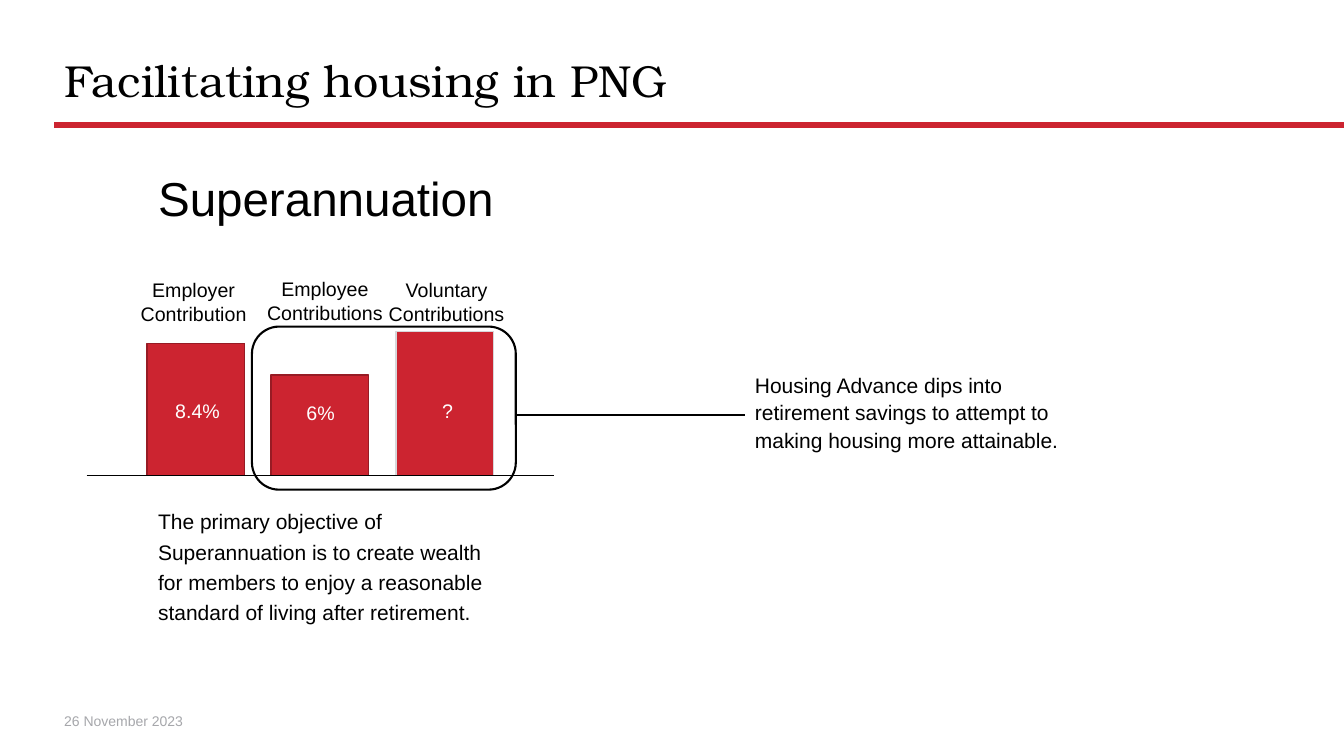
"""Build the superannuation and housing slide."""
from lxml import etree
from pptx import Presentation
from pptx.dml import color
from pptx.enum import shapes, text
from pptx.oxml import ns
from pptx.util import Cm, Pt

TITLE = "Facilitating housing in PNG"
HEADING = "Superannuation"
DATE = "26 November 2023"
OBJECTIVE = (
    "The primary objective of Superannuation is to create wealth for members "
    "to enjoy a reasonable standard of living after retirement."
)
ADVANCE = (
    "Housing Advance dips into retirement savings to attempt to making "
    "housing more attainable."
)
RED, DARK_RED, PALE, GREY = "CC2430", "971B24", "D7D7DA", "A6A7AB"
BLACK, WHITE = "000000", "FFFFFF"
SANS, SERIF = "Arial", "TeX Gyre Bonum"

BARS = [
    {"left": 3.71, "height": 3.33, "line": DARK_RED,
     "value": "8.4%", "value_box": (3.61, 9.93, 2.74, 0.86),
     "label": "Employer Contribution", "label_box": (3.28, 6.88, 3.2, 1.45)},
    {"left": 6.83, "height": 2.53, "line": DARK_RED,
     "value": "6%", "value_box": (6.71, 9.98, 2.74, 0.86),
     "label": "Employee Contributions", "label_box": (6.45, 6.86, 3.48, 1.45)},
    {"left": 9.98, "height": 3.63, "line": PALE,
     "value": "?", "value_box": (9.91, 9.93, 2.74, 0.86),
     "label": "Voluntary\nContributions", "label_box": (9.5, 6.88, 3.51, 1.45)},
]
BAR_WIDTH = 2.46
BASELINE = 11.98
FRAME = (6.35, 8.23, 6.65, 4.11)
LINK_Y = 10.46
LINES = [
    (1.37, 3.15, 33.87, RED, 5),
    (2.18, BASELINE, 13.97, BLACK, 0.5),
    (FRAME[0] + FRAME[2], LINK_Y, 18.77, BLACK, 1.5),
]


def rgb(value):
    """Turn a hex string into a colour."""
    return color.RGBColor.from_string(value)


def write(shape, content, box, size=14, font=SANS, ink=BLACK,
          align=text.PP_ALIGN.LEFT, anchor=text.MSO_ANCHOR.TOP, spacing=1.0):
    """Place a shape and fill it with formatted text."""
    shape.left, shape.top, shape.width, shape.height = map(Cm, box)
    frame = shape.text_frame
    frame.text = content
    frame.word_wrap = True
    frame.auto_size = text.MSO_AUTO_SIZE.NONE
    frame.vertical_anchor = anchor
    for paragraph in frame.paragraphs:
        properties = paragraph._p.get_or_add_pPr()
        properties.set("marL", "0")
        properties.set("indent", "0")
        etree.SubElement(properties, ns.qn("a:buNone"))
        paragraph.alignment = align
        paragraph.line_spacing = spacing
        paragraph.space_before = Pt(0)
        paragraph.font.size = Pt(size)
        paragraph.font.name = font
        paragraph.font.color.rgb = rgb(ink)


def add_text(slide, content, box, **style):
    """Add a text box with formatted text."""
    write(slide.shapes.add_textbox(0, 0, 0, 0), content, box, **style)


def add_block(slide, kind, box, line, width, fill=None):
    """Add an outlined shape, filled when a fill is given."""
    shape = slide.shapes.add_shape(kind, *map(Cm, box))
    shape.shadow.inherit = False
    if fill:
        shape.fill.solid()
        shape.fill.fore_color.rgb = rgb(fill)
    else:
        shape.fill.background()
    shape.line.color.rgb = rgb(line)
    shape.line.width = Pt(width)


def add_line(slide, start, y, end, ink, width):
    """Add a horizontal line without shadow."""
    line = slide.shapes.add_connector(
        shapes.MSO_CONNECTOR.STRAIGHT, Cm(start), Cm(y), Cm(end), Cm(y))
    line.line.color.rgb = rgb(ink)
    line.line.width = Pt(width)
    etree.SubElement(line._element.spPr, ns.qn("a:effectLst"))


def main():
    """Create and save the presentation."""
    presentation = Presentation()
    presentation.slide_width, presentation.slide_height = Cm(33.87), Cm(19.05)
    slide = presentation.slides.add_slide(presentation.slide_layouts[3])
    title, objective, advance = slide.placeholders
    middle, centre = text.MSO_ANCHOR.MIDDLE, text.PP_ALIGN.CENTER

    write(title, TITLE, (1.37, 1.02, 31.14, 2.13), size=32, font=SERIF,
          anchor=middle, spacing=0.9)
    write(objective, OBJECTIVE, (3.73, 12.57, 8.94, 4.78), size=15, spacing=1.2)
    write(advance, ADVANCE, (18.77, 9.19, 8.94, 2.51), size=15, spacing=1.1)
    add_text(slide, HEADING, (3.45, 4.14, 9.53, 1.7), size=34, align=centre)
    add_text(slide, DATE, (1.37, 17.65, 7.62, 1.02), size=10, ink=GREY,
             anchor=middle)

    for bar in BARS:
        box = (bar["left"], BASELINE - bar["height"], BAR_WIDTH, bar["height"])
        add_block(slide, shapes.MSO_SHAPE.RECTANGLE, box, bar["line"], 1, RED)
        add_text(slide, bar["value"], bar["value_box"], ink=WHITE, align=centre)
        add_text(slide, bar["label"], bar["label_box"], align=centre)
    for line in LINES:
        add_line(slide, *line)
    add_block(slide, shapes.MSO_SHAPE.ROUNDED_RECTANGLE, FRAME, BLACK, 1.5)

    presentation.save("out.pptx")


if __name__ == "__main__":
    main()
